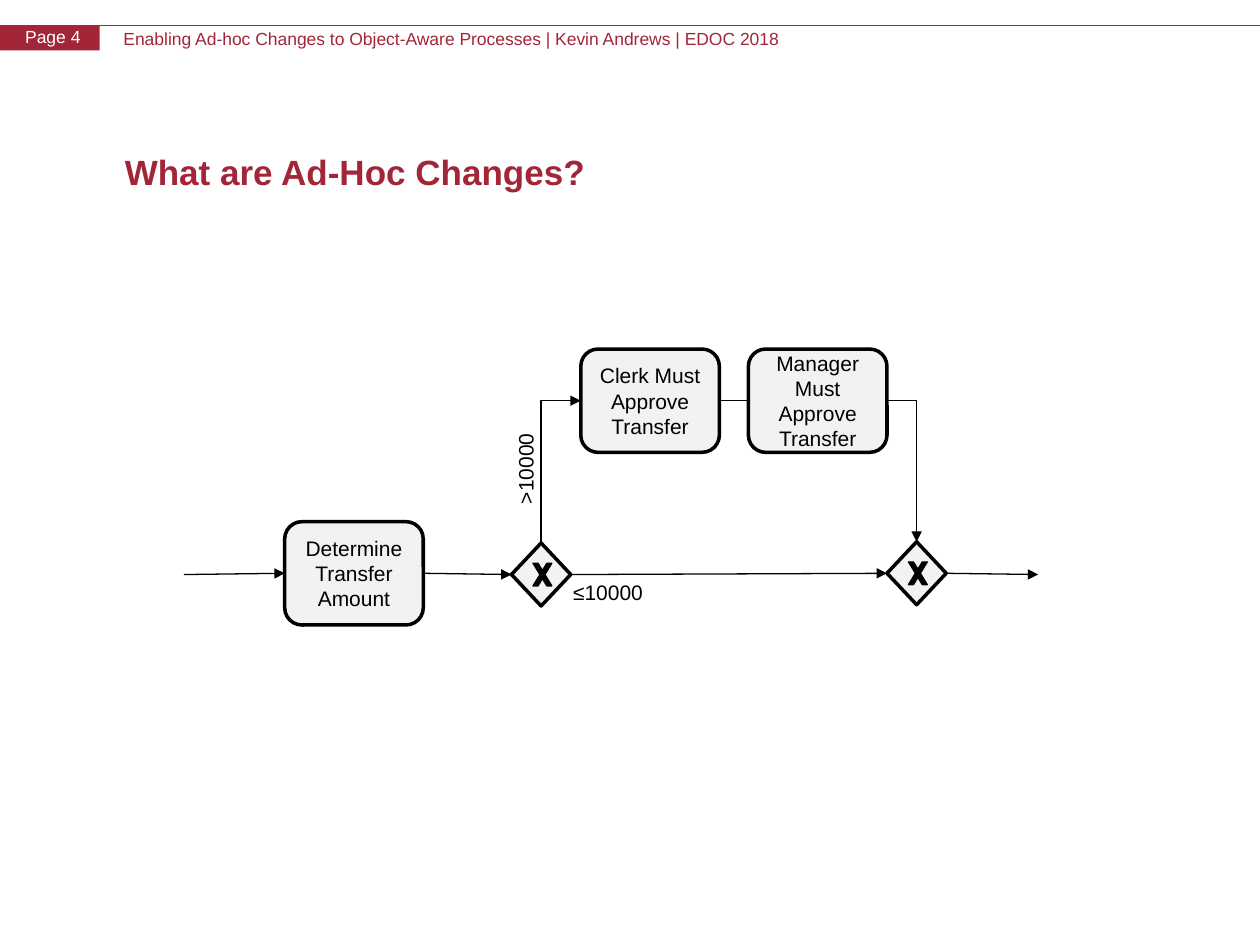
from dataclasses import dataclass

from lxml.etree import SubElement
from pptx import Presentation
from pptx.dml.color import RGBColor
from pptx.enum.shapes import MSO_CONNECTOR as CONN, MSO_SHAPE as SHAPE
from pptx.enum.text import MSO_ANCHOR as ANCHOR, MSO_AUTO_SIZE as FIT, PP_ALIGN as ALIGN
from pptx.oxml.ns import qn
from pptx.util import Pt

PX = 9144
TOP, LEFT, RIGHT = 0, 1, 3


@dataclass(frozen=True)
class Theme:
    font: str = "Arial"
    accent: str = "A32638"
    ink: str = "000000"
    paper: str = "FFFFFF"
    node: str = "F2F2F2"
    title: int = 20
    body: int = 12
    header: int = 10
    thin: float = 0.75
    thick: int = 2


THEME = Theme()


def px(*values):
    return [v * PX for v in values]


def rgb(color):
    return RGBColor.from_string(color)


def write(sp, text, size=THEME.body, color=THEME.ink, bold=False, align=ALIGN.LEFT,
          anchor=ANCHOR.TOP, wrap=True, fit=FIT.NONE, inset=None, leading=None):
    tf = sp.text_frame
    tf.word_wrap, tf.auto_size, tf.vertical_anchor = wrap, fit, anchor
    if inset is not None:
        tf.margin_left = tf.margin_top = tf.margin_right = tf.margin_bottom = inset
    p = tf.paragraphs[0]
    p.alignment = align
    if leading:
        p.line_spacing = Pt(leading)
    r = p.add_run()
    r.text = text
    r.font.name, r.font.size, r.font.bold = THEME.font, Pt(size), bold
    r.font.color.rgb = rgb(color)


def add_label(slide, box, text, vertical=False, **fmt):
    sp = slide.shapes.add_textbox(*px(*box))
    write(sp, text, fit=FIT.SHAPE_TO_FIT_TEXT, **fmt)
    if vertical:
        sp.text_frame._txBody.bodyPr.set("vert", "vert270")


def paint(sp, fill, line=None, width=THEME.thin):
    sp.shadow.inherit = False
    sp.fill.solid()
    sp.fill.fore_color.rgb = rgb(fill)
    if line:
        sp.line.color.rgb = rgb(line)
        sp.line.width = Pt(width)
    else:
        sp.line.fill.background()


def add_task(slide, x, y, text):
    sp = slide.shapes.add_shape(SHAPE.ROUNDED_RECTANGLE, *px(x, y, 110, 82))
    paint(sp, THEME.node, THEME.ink, THEME.thick)
    write(sp, text, align=ALIGN.CENTER, anchor=ANCHOR.MIDDLE)
    return sp


def add_gateway(slide, x, y):
    width, height = 47, 50
    shapes = slide.shapes.add_group_shape().shapes
    diamond = shapes.add_shape(SHAPE.DIAMOND, *px(x, y, width, height))
    paint(diamond, THEME.node, THEME.ink, THEME.thick)
    stroke = [(17, 16), (21, 16), (32, 34), (28, 34)]
    mirrored = [(dx, height - dy) for dx, dy in stroke]
    for outline in (stroke, mirrored):
        points = [(x + dx, y + dy) for dx, dy in outline]
        builder = shapes.build_freeform(*points[0], scale=PX)
        builder.add_line_segments(points[1:], close=True)
        paint(builder.convert_to_shape(), THEME.ink, THEME.ink)
    return diamond


def add_line(slide, start, end, kind=CONN.STRAIGHT, color=THEME.ink, arrow=True):
    c = slide.shapes.add_connector(kind, *px(*start, *end))
    c.line.color.rgb = rgb(color)
    c.line.width = Pt(THEME.thin)
    if arrow:
        SubElement(c.line._get_or_add_ln(), qn("a:tailEnd"), type="triangle")
    SubElement(c._element.spPr, qn("a:effectLst"))
    return c


def add_flow(slide, source=None, target=None, start=(0, 0), end=(0, 0), kind=CONN.STRAIGHT):
    c = add_line(slide, start, end, kind)
    if source:
        c.begin_connect(*source)
    if target:
        c.end_connect(*target)
    if kind == CONN.ELBOW:
        c._element.spPr.find(qn("a:prstGeom")).set("prst", "bentConnector2")
    return c


def turn_up_first(c):
    left, top, width, height = c.left, c.top, c.width, c.height
    c.left, c.top = left + (width - height) // 2, top + (height - width) // 2
    c.width, c.height = height, width
    xfrm = c._element.spPr.find(qn("a:xfrm"))
    xfrm.attrib.pop("flipV", None)
    xfrm.set("rot", str(270 * 60000))


def add_header(slide):
    add_line(slide, (0, 20), (1000, 20), color=THEME.accent, arrow=False)
    tab = slide.shapes.add_shape(SHAPE.RECTANGLE, *px(0, 20, 79, 20))
    paint(tab, THEME.accent)
    add_label(slide, (98, 22, 890, 17),
              "Enabling Ad-hoc Changes to Object-Aware Processes | Kevin Andrews | EDOC 2018",
              size=THEME.header, color=THEME.accent, inset=0)
    add_label(slide, (20, 21, 62, 17), "Page 4",
              size=THEME.header, color=THEME.paper, inset=0)


def add_title(slide, text):
    sp = slide.shapes.title
    sp.left, sp.top, sp.width, sp.height = px(89, 100, 853, 72)
    write(sp, text, size=THEME.title, color=THEME.accent, bold=True,
          anchor=ANCHOR.MIDDLE, leading=24)


def add_process(slide):
    determine = add_task(slide, 226, 414, "Determine Transfer Amount")
    split = add_gateway(slide, 406, 431)
    clerk = add_task(slide, 461, 277, "Clerk Must Approve Transfer")
    join = add_gateway(slide, 704, 430)

    add_flow(slide, target=(determine, LEFT), start=(146, 456))
    add_flow(slide, (determine, RIGHT), (split, LEFT))
    add_flow(slide, (split, RIGHT), (join, LEFT))
    add_flow(slide, (join, RIGHT), end=(824, 456))
    turn_up_first(add_flow(slide, (split, TOP), (clerk, LEFT), kind=CONN.ELBOW))
    add_flow(slide, (clerk, RIGHT), (join, TOP), kind=CONN.ELBOW)

    add_label(slide, (402, 344, 40, 66), ">10000", vertical=True, wrap=False)
    add_label(slide, (445, 455, 76, 30), "≤10000", wrap=False)
    add_task(slide, 594, 277, "Manager Must Approve Transfer")


def main():
    prs = Presentation()
    prs.slide_width, prs.slide_height = px(1000, 750)
    slide = prs.slides.add_slide(prs.slide_layouts[5])
    add_header(slide)
    add_title(slide, "What are Ad-Hoc Changes?")
    add_process(slide)
    prs.save("out.pptx")


if __name__ == "__main__":
    main()
